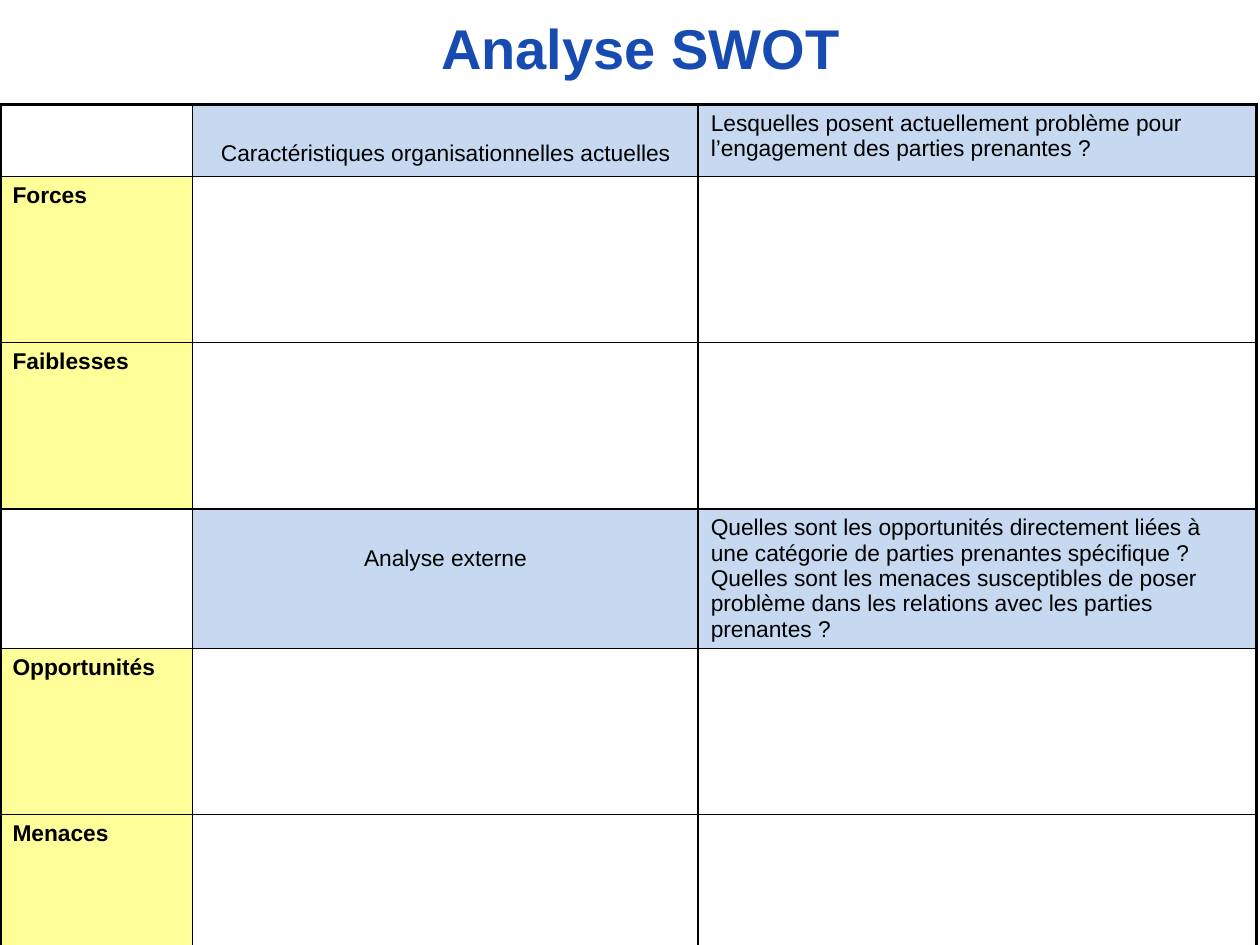
from dataclasses import dataclass

from lxml import etree
from pptx import Presentation
from pptx.dml.color import RGBColor
from pptx.enum.text import MSO_ANCHOR, PP_ALIGN
from pptx.oxml.ns import qn
from pptx.util import Pt

LEFT = PP_ALIGN.LEFT
CENTER = PP_ALIGN.CENTER
MIDDLE = MSO_ANCHOR.MIDDLE


@dataclass(frozen=True)
class Theme:
    font: str = "Arial"
    title_size: float = 32
    body_size: float = 13
    title_color: str = "184BB2"
    ink: str = "000000"
    heading_fill: str = "C6D9F1"
    label_fill: str = "FFFF99"
    answer_fill: str = "FFFFFF"
    outer_line: float = 2.25
    inner_line: float = 1


@dataclass(frozen=True)
class HeadingRow:
    topic: str
    question: str
    height: float


@dataclass(frozen=True)
class AnswerRow:
    label: str
    height: float = 95


THEME = Theme()
COLUMN_WIDTHS = (110, 289, 319)
TABLE_TOP = 59.8
TOPIC_TOP_MARGIN = 21
ROWS = (
    HeadingRow(
        "Caractéristiques organisationnelles actuelles",
        "Lesquelles posent actuellement problème pour l’engagement des parties prenantes ?",
        41,
    ),
    AnswerRow("Forces"),
    AnswerRow("Faiblesses"),
    HeadingRow(
        "Analyse externe",
        "Quelles sont les opportunités directement liées à une catégorie de parties "
        "prenantes spécifique ? Quelles sont les menaces susceptibles de poser problème "
        "dans les relations avec les parties prenantes ?",
        53,
    ),
    AnswerRow("Opportunités"),
    AnswerRow("Menaces"),
)


def write_text(text_frame, text: str, *, size: float = THEME.body_size,
               color: str = THEME.ink, bold: bool = False, align=LEFT) -> None:
    text_frame.word_wrap = True
    paragraph = text_frame.paragraphs[0]
    paragraph.alignment = align
    run = paragraph.add_run()
    run.text = text
    run.font.name = THEME.font
    run.font.size = Pt(size)
    run.font.bold = bold
    run.font.color.rgb = RGBColor.from_string(color)


def set_borders(cell, outer_sides: dict[str, bool]) -> None:
    """Draw the four cell borders, thicker on the table's outer edge."""
    properties = cell._tc.get_or_add_tcPr()
    for side, is_outer in outer_sides.items():
        width = THEME.outer_line if is_outer else THEME.inner_line
        line = etree.SubElement(properties, qn(f"a:ln{side}"), w=str(Pt(width)))
        fill = etree.SubElement(line, qn("a:solidFill"))
        etree.SubElement(fill, qn("a:srgbClr"), val=THEME.ink)


def set_fill(cell, color: str) -> None:
    cell.fill.solid()
    cell.fill.fore_color.rgb = RGBColor.from_string(color)


def fill_heading_row(cells: list, row: HeadingRow) -> None:
    corner, topic, question = cells
    corner.fill.background()
    for cell in (topic, question):
        set_fill(cell, THEME.heading_fill)
    topic.margin_top = Pt(TOPIC_TOP_MARGIN)
    write_text(topic.text_frame, row.topic, align=CENTER)
    write_text(question.text_frame, row.question)


def fill_answer_row(cells: list, row: AnswerRow) -> None:
    label, *answers = cells
    set_fill(label, THEME.label_fill)
    write_text(label.text_frame, row.label, bold=True)
    for answer in answers:
        set_fill(answer, THEME.answer_fill)


def add_title(slide) -> None:
    shape = slide.shapes.add_textbox(Pt(42), Pt(0), Pt(648), Pt(54))
    shape.text_frame.vertical_anchor = MIDDLE
    write_text(shape.text_frame, "Analyse SWOT", size=THEME.title_size,
               color=THEME.title_color, bold=True, align=CENTER)


def add_swot_table(slide) -> None:
    table = slide.shapes.add_table(
        len(ROWS), len(COLUMN_WIDTHS), Pt(0), Pt(TABLE_TOP),
        Pt(sum(COLUMN_WIDTHS)), Pt(sum(row.height for row in ROWS)),
    ).table
    table.first_row = False
    table.horz_banding = False
    for column, width in zip(table.columns, COLUMN_WIDTHS):
        column.width = Pt(width)

    for row_index, row in enumerate(ROWS):
        table.rows[row_index].height = Pt(row.height)
        cells = list(table.rows[row_index].cells)
        for column_index, cell in enumerate(cells):
            set_borders(cell, {
                "L": column_index == 0,
                "R": column_index == len(COLUMN_WIDTHS) - 1,
                "T": row_index == 0,
                "B": row_index == len(ROWS) - 1,
            })
        if isinstance(row, HeadingRow):
            fill_heading_row(cells, row)
        else:
            fill_answer_row(cells, row)


def main() -> None:
    presentation = Presentation()
    presentation.slide_width = Pt(720)
    presentation.slide_height = Pt(540)
    slide = presentation.slides.add_slide(presentation.slide_layouts[6])
    add_swot_table(slide)
    add_title(slide)
    presentation.save("out.pptx")


if __name__ == "__main__":
    main()
